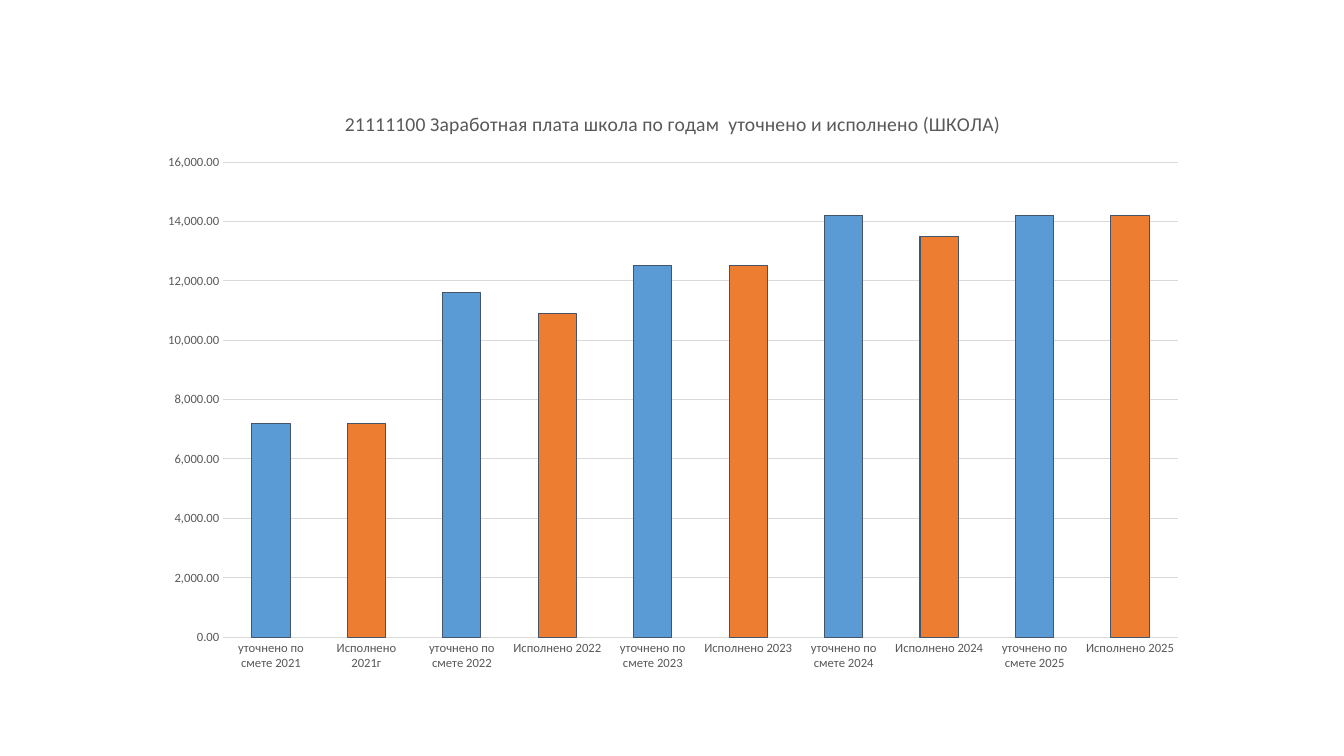
from pptx import Presentation
from pptx.chart.data import CategoryChartData
from pptx.dml.color import RGBColor
from pptx.enum.chart import XL_CHART_TYPE, XL_TICK_MARK
from pptx.util import Inches, Pt

BLACK = RGBColor(0x00, 0x00, 0x00)
GRAY = RGBColor(0x59, 0x59, 0x59)
GRID = RGBColor(0xD9, 0xD9, 0xD9)
PLANNED = RGBColor(0x5B, 0x9B, 0xD5)
SPENT = RGBColor(0xED, 0x7D, 0x31)
OUTLINE = RGBColor(0x44, 0x54, 0x6A)

TITLE = "21111100 Заработная плата школа по годам  уточнено и исполнено (ШКОЛА)"
SALARIES = [
    ("уточнено по смете 2021", 7200),
    ("Исполнено 2021г", 7200),
    ("уточнено по смете 2022", 11600),
    ("Исполнено 2022", 10900),
    ("уточнено по смете 2023", 12500),
    ("Исполнено 2023", 12500),
    ("уточнено по смете 2024", 14200),
    ("Исполнено 2024", 13500),
    ("уточнено по смете 2025", 14200),
    ("Исполнено 2025", 14200),
]


def set_font(font, size, color):
    font.name = "Calibri"
    font.size = Pt(size)
    font.bold = False
    font.color.rgb = color


def format_bar(bar_format, color):
    bar_format.fill.solid()
    bar_format.fill.fore_color.rgb = color
    bar_format.line.color.rgb = OUTLINE
    bar_format.line.width = Pt(0.75)


def format_title(chart):
    chart.has_title = True
    chart.chart_title.include_in_layout = False
    paragraph = chart.chart_title.text_frame.paragraphs[0]
    paragraph.text = TITLE
    set_font(paragraph.font, 14, GRAY)


def format_axes(chart):
    for axis in (chart.category_axis, chart.value_axis):
        axis.major_tick_mark = XL_TICK_MARK.NONE
        axis.minor_tick_mark = XL_TICK_MARK.NONE
        axis.format.line.fill.background()
        set_font(axis.tick_labels.font, 9, GRAY)
    value_axis = chart.value_axis
    value_axis.minimum_scale = 0
    value_axis.maximum_scale = 16000
    value_axis.major_unit = 2000
    value_axis.tick_labels.number_format = "#,##0.00"
    value_axis.tick_labels.number_format_is_linked = False
    value_axis.has_major_gridlines = True
    value_axis.major_gridlines.format.line.color.rgb = GRID
    value_axis.major_gridlines.format.line.width = Pt(0.75)


def add_salary_chart(slide, left, top, width, height):
    data = CategoryChartData(number_format="#,##0.00")
    data.categories = [label for label, amount in SALARIES]
    data.add_series("Series 1", [amount for label, amount in SALARIES])
    chart = slide.shapes.add_chart(
        XL_CHART_TYPE.COLUMN_CLUSTERED, left, top, width, height, data
    ).chart
    set_font(chart.font, 10, BLACK)
    chart.has_legend = False
    format_title(chart)
    format_axes(chart)

    plot = chart.plots[0]
    plot.vary_by_categories = False
    plot.gap_width = 150
    series = plot.series[0]
    series.invert_if_negative = False
    format_bar(series.format, PLANNED)
    for index in range(1, len(SALARIES), 2):
        format_bar(series.points[index].format, SPENT)


def main():
    presentation = Presentation()
    presentation.slide_width = Inches(13.33)
    presentation.slide_height = Inches(7.5)
    slide = presentation.slides.add_slide(presentation.slide_layouts[6])
    add_salary_chart(slide, Inches(1.46), Inches(0.89), Inches(10.43), Inches(5.88))
    presentation.save("out.pptx")


if __name__ == "__main__":
    main()
